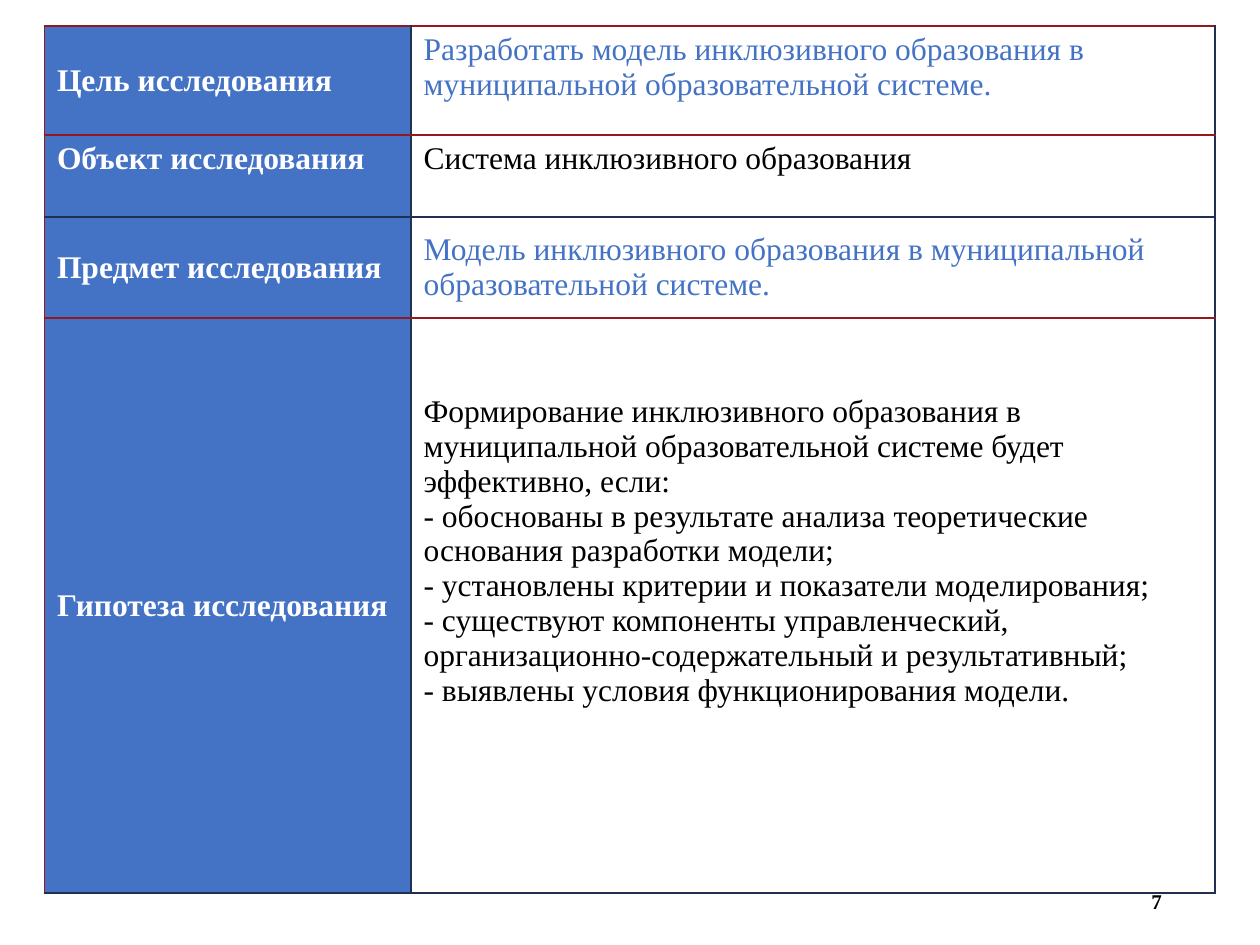
import dataclasses

import lxml.etree
import pptx
import pptx.dml.color
import pptx.enum.text
import pptx.oxml.ns
import pptx.util

Pt = pptx.util.Pt
Anchor = pptx.enum.text.MSO_ANCHOR


@dataclasses.dataclass(frozen=True)
class Theme:
    font: str = "Times New Roman"
    body_size: int = 18
    number_size: int = 12
    blue: str = "4472C4"
    white: str = "FFFFFF"
    black: str = "000000"
    red: str = "921A1D"
    navy: str = "1F3050"
    border_width: int = 1


THEME = Theme()
COLUMN_WIDTHS = (209.5, 459.5)
HYPOTHESIS = [
    "Формирование инклюзивного образования в муниципальной образовательной системе будет эффективно, если:",
    "- обоснованы в результате анализа теоретические основания разработки модели;",
    "- установлены критерии и показатели моделирования;",
    "- существуют компоненты управленческий, организационно-содержательный и результативный;",
    "- выявлены условия функционирования модели.",
]


@dataclasses.dataclass(frozen=True)
class Row:
    label: str
    lines: list
    height: float
    color: str
    top_line: str
    bottom_line: str
    label_anchor: Anchor = Anchor.MIDDLE
    text_anchor: Anchor = Anchor.TOP
    top_margin: float = 3.6


ROWS = [
    Row("Цель исследования",
        ["Разработать модель инклюзивного образования в муниципальной образовательной системе."],
        62.3, THEME.blue, THEME.red, THEME.red),
    Row("Объект исследования", ["Система инклюзивного образования"],
        46.9, THEME.black, THEME.red, THEME.navy, label_anchor=Anchor.TOP),
    Row("Предмет исследования",
        ["Модель инклюзивного образования в муниципальной образовательной системе."],
        57.7, THEME.blue, THEME.navy, THEME.red, text_anchor=Anchor.MIDDLE),
    Row("Гипотеза исследования", HYPOTHESIS,
        328.6, THEME.black, THEME.red, THEME.navy, top_margin=43.6),
]


def rgb(value):
    return pptx.dml.color.RGBColor.from_string(value)


def write_lines(text_frame, lines, size, color, bold):
    text_frame.text = "\n".join(lines)
    for paragraph in text_frame.paragraphs:
        paragraph.font.name = THEME.font
        paragraph.font.size = Pt(size)
        paragraph.font.bold = bold
        paragraph.font.color.rgb = rgb(color)


def set_borders(cell, left, right, top, bottom):
    qn = pptx.oxml.ns.qn
    properties = cell._tc.get_or_add_tcPr()
    sides = (("a:lnL", left), ("a:lnR", right), ("a:lnT", top), ("a:lnB", bottom))
    for index, (tag, color) in enumerate(sides):
        line = lxml.etree.Element(qn(tag), w=str(Pt(THEME.border_width)))
        fill = lxml.etree.SubElement(line, qn("a:solidFill"))
        lxml.etree.SubElement(fill, qn("a:srgbClr"), val=color)
        properties.insert(index, line)


def fill_cell(cell, lines, fill, color, bold, anchor):
    cell.fill.solid()
    cell.fill.fore_color.rgb = rgb(fill)
    cell.vertical_anchor = anchor
    write_lines(cell.text_frame, lines, THEME.body_size, color, bold)


def add_research_table(slide):
    table = slide.shapes.add_table(
        len(ROWS), len(COLUMN_WIDTHS), Pt(25.4), Pt(14.9),
        Pt(sum(COLUMN_WIDTHS)), Pt(sum(row.height for row in ROWS))).table
    table.first_row = False
    table.horz_banding = False
    for column, width in zip(table.columns, COLUMN_WIDTHS):
        column.width = Pt(width)
    for index, row in enumerate(ROWS):
        table.rows[index].height = Pt(row.height)
        label, description = table.cell(index, 0), table.cell(index, 1)
        fill_cell(label, [row.label], THEME.blue, THEME.white, True, row.label_anchor)
        fill_cell(description, row.lines, THEME.white, row.color, False, row.text_anchor)
        description.margin_top = Pt(row.top_margin)
        set_borders(label, THEME.red, THEME.navy, row.top_line, row.bottom_line)
        set_borders(description, THEME.navy, THEME.navy, row.top_line, row.bottom_line)


def add_slide_number(slide, number):
    box = slide.shapes.add_textbox(Pt(509), Pt(500.4), Pt(162), Pt(28.8))
    text_frame = box.text_frame
    text_frame.word_wrap = True
    text_frame.vertical_anchor = Anchor.MIDDLE
    write_lines(text_frame, [number], THEME.number_size, THEME.black, True)
    text_frame.paragraphs[0].alignment = pptx.enum.text.PP_ALIGN.RIGHT


def main():
    presentation = pptx.Presentation()
    presentation.slide_width = Pt(720)
    presentation.slide_height = Pt(540)
    slide = presentation.slides.add_slide(presentation.slide_layouts[6])
    add_slide_number(slide, "7")
    add_research_table(slide)
    presentation.save("out.pptx")


if __name__ == "__main__":
    main()
